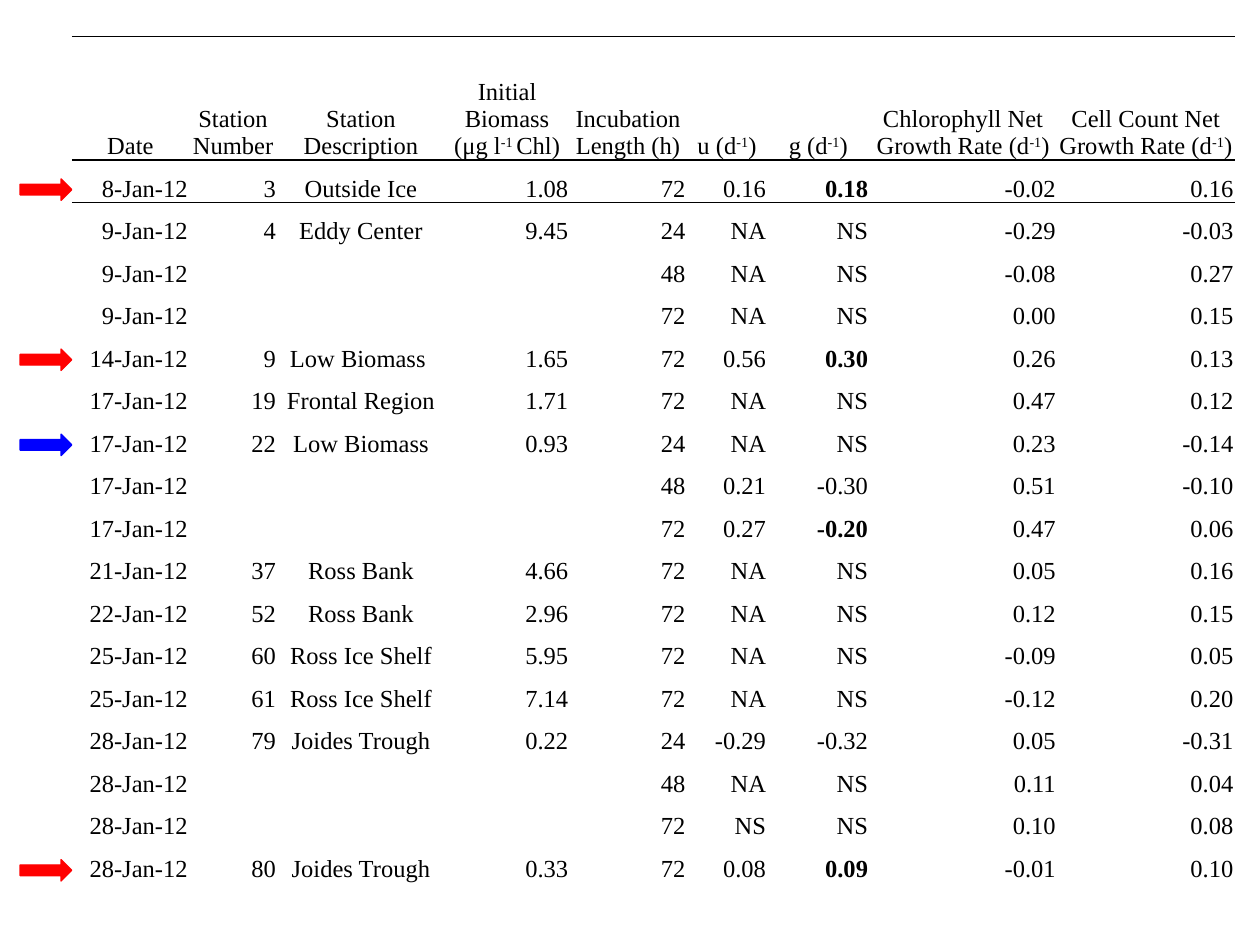
import typing

import lxml.etree
import pptx
import pptx.dml.color
import pptx.enum.shapes
import pptx.enum.text
import pptx.oxml.ns
import pptx.util

BLACK = pptx.dml.color.RGBColor(0x00, 0x00, 0x00)
RED = pptx.dml.color.RGBColor(0xFF, 0x00, 0x00)
BLUE = pptx.dml.color.RGBColor(0x00, 0x00, 0xFF)

FONT = {"name": "Times New Roman", "size": pptx.util.Pt(14)}
CELL_FORMAT = {
    "margin_left": pptx.util.Inches(0.01),
    "margin_right": pptx.util.Inches(0.01),
    "margin_top": pptx.util.Inches(0.01),
    "margin_bottom": 0,
    "vertical_anchor": pptx.enum.text.MSO_ANCHOR.BOTTOM,
}
NO_STYLE_NO_GRID = "{2D5ABB26-0587-4C30-8999-92F81FD0307C}"
CENTER = pptx.enum.text.PP_ALIGN.CENTER
RIGHT = pptx.enum.text.PP_ALIGN.RIGHT


class Column(typing.NamedTuple):
    heading: str  # parts between carets are superscript
    width: float
    alignment: pptx.enum.text.PP_ALIGN = RIGHT


class Incubation(typing.NamedTuple):
    date: str
    station: str
    description: str
    biomass: str
    hours: str
    growth: str
    grazing: str
    chlorophyll_rate: str
    cell_rate: str
    bold_grazing: bool = False
    arrow: typing.Optional[pptx.dml.color.RGBColor] = None


COLUMNS = [
    Column("Date", 0.93),
    Column("Station Number", 0.7),
    Column("Station Description", 1.33, CENTER),
    Column("Initial Biomass (μg l^-1 ^Chl)", 0.99),
    Column("Incubation Length (h)", 0.93),
    Column("u (d^-1^)", 0.64),
    Column("g (d^-1^)", 0.81),
    Column("Chlorophyll Net Growth Rate (d^-1^)", 1.49),
    Column("Cell Count Net Growth Rate (d^-1^)", 1.41),
]
INCUBATIONS = [
    Incubation("8-Jan-12", "3", "Outside Ice", "1.08", "72", "0.16", "0.18", "-0.02", "0.16", True, RED),
    Incubation("9-Jan-12", "4", "Eddy Center", "9.45", "24", "NA", "NS", "-0.29", "-0.03"),
    Incubation("9-Jan-12", "", "", "", "48", "NA", "NS", "-0.08", "0.27"),
    Incubation("9-Jan-12", "", "", "", "72", "NA", "NS", "0.00", "0.15"),
    Incubation("14-Jan-12", "9", "Low Biomass ", "1.65", "72", "0.56", "0.30", "0.26", "0.13", True, RED),
    Incubation("17-Jan-12", "19", "Frontal Region", "1.71", "72", "NA", "NS", "0.47", "0.12"),
    Incubation("17-Jan-12", "22", "Low Biomass", "0.93", "24", "NA", "NS", "0.23", "-0.14", arrow=BLUE),
    Incubation("17-Jan-12", "", "", "", "48", "0.21", "-0.30", "0.51", "-0.10"),
    Incubation("17-Jan-12", "", "", "", "72", "0.27", "-0.20", "0.47", "0.06", True),
    Incubation("21-Jan-12", "37", "Ross Bank", "4.66", "72", "NA", "NS", "0.05", "0.16"),
    Incubation("22-Jan-12", "52", "Ross Bank", "2.96", "72", "NA", "NS", "0.12", "0.15"),
    Incubation("25-Jan-12", "60", "Ross Ice Shelf", "5.95", "72", "NA", "NS", "-0.09", "0.05"),
    Incubation("25-Jan-12", "61", "Ross Ice Shelf", "7.14", "72", "NA", "NS", "-0.12", "0.20"),
    Incubation("28-Jan-12", "79", "Joides Trough", "0.22", "24", "-0.29", "-0.32", "0.05", "-0.31"),
    Incubation("28-Jan-12", "", "", "", "48", "NA", "NS", "0.11", "0.04"),
    Incubation("28-Jan-12", "", "", "", "72", "NS", "NS", "0.10", "0.08"),
    Incubation("28-Jan-12", "80", "Joides Trough", "0.33", "72", "0.08", "0.09", "-0.01", "0.10", True, RED),
]
GRAZING_COLUMN = Incubation._fields.index("grazing")

TABLE_LEFT, TABLE_TOP, TABLE_HEIGHT = 0.57, 0.29, 6.72
HEADER_HEIGHT = 0.98
ROW_HEIGHT = (TABLE_HEIGHT - HEADER_HEIGHT) / len(INCUBATIONS)
ARROW_WIDTH, ARROW_HEIGHT = 0.41, 0.17
ARROW_OFFSET = 0.15  # from the top of its row


def set_attributes(target: typing.Any, values: dict) -> None:
    for name, value in values.items():
        setattr(target, name, value)


def add_border(cell: typing.Any, side: str) -> None:
    """Draw a thin black rule on side T (top) or B (bottom)."""
    properties = cell._tc.get_or_add_tcPr()
    line = lxml.etree.SubElement(
        properties, pptx.oxml.ns.qn(f"a:ln{side}"), w=str(pptx.util.Pt(1))
    )
    fill = lxml.etree.SubElement(line, pptx.oxml.ns.qn("a:solidFill"))
    lxml.etree.SubElement(fill, pptx.oxml.ns.qn("a:srgbClr"), val=str(BLACK))


def write_cell(cell: typing.Any, text: str, alignment: typing.Any,
               borders: str = "", bold: bool = False) -> None:
    set_attributes(cell, CELL_FORMAT)
    for side in borders:
        add_border(cell, side)
    cell.fill.background()
    paragraph = cell.text_frame.paragraphs[0]
    paragraph.alignment = alignment
    if not text:
        lxml.etree.SubElement(paragraph._p, pptx.oxml.ns.qn("a:endParaRPr"), sz="1400")
        return
    for index, part in enumerate(text.split("^")):
        run = paragraph.add_run()
        run.text = part
        set_attributes(run.font, {**FONT, "bold": bold})
        run.font.color.rgb = BLACK
        if index % 2:
            run._r.get_or_add_rPr().set("baseline", "30000")


def add_incubation_table(slide: typing.Any) -> None:
    frame = slide.shapes.add_table(
        len(INCUBATIONS) + 1, len(COLUMNS),
        pptx.util.Inches(TABLE_LEFT), pptx.util.Inches(TABLE_TOP),
        pptx.util.Inches(sum(column.width for column in COLUMNS)),
        pptx.util.Inches(TABLE_HEIGHT),
    )
    table = frame.table
    set_attributes(table, {"first_row": False, "horz_banding": False})
    table._tbl.tblPr.find(pptx.oxml.ns.qn("a:tableStyleId")).text = NO_STYLE_NO_GRID
    for index, row in enumerate(table.rows):
        row.height = pptx.util.Inches(ROW_HEIGHT if index else HEADER_HEIGHT)
    for column_index, column in enumerate(COLUMNS):
        table.columns[column_index].width = pptx.util.Inches(column.width)
        write_cell(table.cell(0, column_index), column.heading, CENTER, "TB")
        for row_index, incubation in enumerate(INCUBATIONS, 1):
            write_cell(
                table.cell(row_index, column_index),
                incubation[column_index],
                column.alignment,
                "T" if row_index == 1 else "",
                incubation.bold_grazing and column_index == GRAZING_COLUMN,
            )


def add_row_arrow(slide: typing.Any, row: int, color: pptx.dml.color.RGBColor) -> None:
    """Point at a data row from the left edge of the table."""
    top = TABLE_TOP + HEADER_HEIGHT + row * ROW_HEIGHT + ARROW_OFFSET
    arrow = slide.shapes.add_shape(
        pptx.enum.shapes.MSO_SHAPE.RIGHT_ARROW,
        pptx.util.Inches(TABLE_LEFT - ARROW_WIDTH), pptx.util.Inches(top),
        pptx.util.Inches(ARROW_WIDTH), pptx.util.Inches(ARROW_HEIGHT),
    )
    arrow.shadow.inherit = False
    arrow.fill.solid()
    arrow.fill.fore_color.rgb = color
    arrow.line.color.rgb = color
    arrow.line.width = pptx.util.Pt(0.75)


def main() -> None:
    presentation = pptx.Presentation()
    presentation.slide_width = pptx.util.Inches(10)
    presentation.slide_height = pptx.util.Inches(7.5)
    slide = presentation.slides.add_slide(presentation.slide_layouts[6])
    add_incubation_table(slide)
    for row, incubation in enumerate(INCUBATIONS):
        if incubation.arrow is not None:
            add_row_arrow(slide, row, incubation.arrow)
    presentation.save("out.pptx")


if __name__ == "__main__":
    main()
